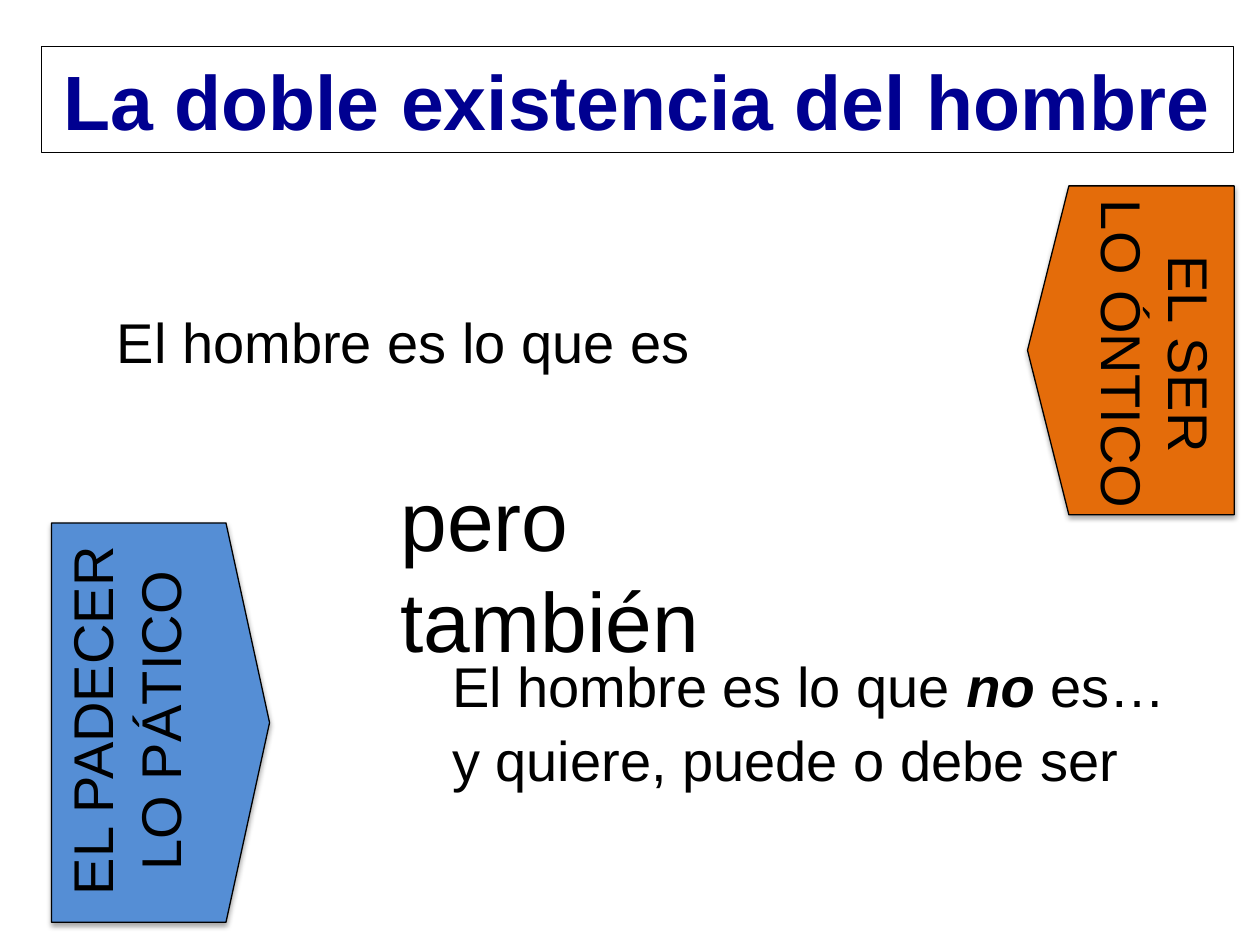
"""Build the slide on the double existence of man."""
from dataclasses import dataclass

from lxml.etree import SubElement
from pptx import Presentation
from pptx.dml.color import RGBColor
from pptx.enum.shapes import MSO_SHAPE
from pptx.enum.text import MSO_ANCHOR, MSO_AUTO_SIZE, PP_ALIGN
from pptx.oxml.ns import qn
from pptx.slide import Slide
from pptx.text.text import TextFrame
from pptx.util import Inches, Pt

BLACK = RGBColor(0x00, 0x00, 0x00)
NAVY = RGBColor(0x00, 0x00, 0x90)
ORANGE = RGBColor(0xE4, 0x6C, 0x0A)
BLUE = RGBColor(0x55, 0x8E, 0xD5)
FONT_NAME = "Arial"


@dataclass(frozen=True)
class Box:
    left: float
    top: float
    width: float
    height: float
    rotation: float = 0

    def lengths(self) -> list[int]:
        return [Inches(value) for value in (self.left, self.top, self.width, self.height)]


@dataclass(frozen=True)
class Pointer:
    box: Box
    color: RGBColor


@dataclass(frozen=True)
class Label:
    box: Box
    lines: tuple[tuple[str, ...], ...]
    size: int = 32
    alignment: PP_ALIGN = PP_ALIGN.LEFT
    wrap: bool = False
    emphasis: str = ""


POINTERS = (
    Pointer(Box(7.67, 1.96, 2.61, 1.64, 90), ORANGE),
    Pointer(Box(-0.31, 4.87, 3.17, 1.73, 270), BLUE),
)
LABELS = (
    Label(Box(0.83, 2.39, 4.79, 0.64), (("El hombre es lo que es",),)),
    Label(Box(3.49, 5.12, 5.91, 0.64), (("El hombre es lo que ", "no", " es…"),), emphasis="no"),
    Label(Box(3.08, 3.66, 2.95, 0.91), (("pero también",),), size=48, wrap=True),
    Label(Box(7.84, 2.22, 2.67, 1.18, 90), (("EL SER",), ("LO ÓNTICO",)), alignment=PP_ALIGN.CENTER),
    Label(Box(-0.5, 5.13, 3, 1.18, 270), (("EL PADECER",), ("LO PÁTICO",)), alignment=PP_ALIGN.CENTER),
    Label(Box(3.49, 5.71, 5.55, 1.18), (("y quiere, puede o debe ser",),)),
)


def format_runs(text_frame: TextFrame, size: int, color: RGBColor) -> None:
    for paragraph in text_frame.paragraphs:
        for run in paragraph.runs:
            run.font.name = FONT_NAME
            run.font.size = Pt(size)
            run.font.color.rgb = color


def set_title(slide: Slide, text: str) -> None:
    title = slide.shapes.title
    title.left, title.top, title.width, title.height = Box(0.33, 0.37, 9.46, 0.84).lengths()
    title.line.color.rgb = BLACK
    title.line.width = Pt(0.75)
    text_frame = title.text_frame
    text_frame.text = text
    text_frame.auto_size = MSO_AUTO_SIZE.NONE
    text_frame.word_wrap = False
    text_frame.vertical_anchor = MSO_ANCHOR.MIDDLE
    text_frame.paragraphs[0].alignment = PP_ALIGN.CENTER
    format_runs(text_frame, 44, NAVY)
    text_frame.paragraphs[0].runs[0].font.bold = True


def add_pointer(slide: Slide, pointer: Pointer) -> None:
    shape = slide.shapes.add_shape(MSO_SHAPE.FLOWCHART_OFFPAGE_CONNECTOR, *pointer.box.lengths())
    shape.rotation = pointer.box.rotation
    shape.fill.solid()
    shape.fill.fore_color.rgb = pointer.color
    shape.line.color.rgb = BLACK
    shape.line.width = Pt(0.75)
    shape.shadow.inherit = False
    effects = shape.element.spPr.find(qn("a:effectLst"))
    shadow = SubElement(effects, qn("a:outerShdw"), blurRad=str(Pt(3.1)),
                        dist=str(Pt(1.8)), dir="5400000", rotWithShape="0")
    shadow_color = SubElement(shadow, qn("a:srgbClr"), val=str(BLACK))
    SubElement(shadow_color, qn("a:alpha"), val="35000")


def add_label(slide: Slide, label: Label) -> None:
    shape = slide.shapes.add_textbox(*label.box.lengths())
    shape.rotation = label.box.rotation
    text_frame = shape.text_frame
    text_frame.word_wrap = label.wrap
    for index, pieces in enumerate(label.lines):
        paragraph = text_frame.add_paragraph() if index else text_frame.paragraphs[0]
        paragraph.alignment = label.alignment
        for piece in pieces:
            run = paragraph.add_run()
            run.text = piece
            if piece == label.emphasis:
                run.font.bold = run.font.italic = True
    format_runs(text_frame, label.size, BLACK)


def main() -> None:
    presentation = Presentation()
    presentation.slide_width, presentation.slide_height = Inches(10), Inches(7.5)
    slide = presentation.slides.add_slide(presentation.slide_layouts.get_by_name("Title Only"))
    set_title(slide, "La doble existencia del hombre")
    for pointer in POINTERS:
        add_pointer(slide, pointer)
    for label in LABELS:
        add_label(slide, label)
    presentation.save("out.pptx")


if __name__ == "__main__":
    main()
